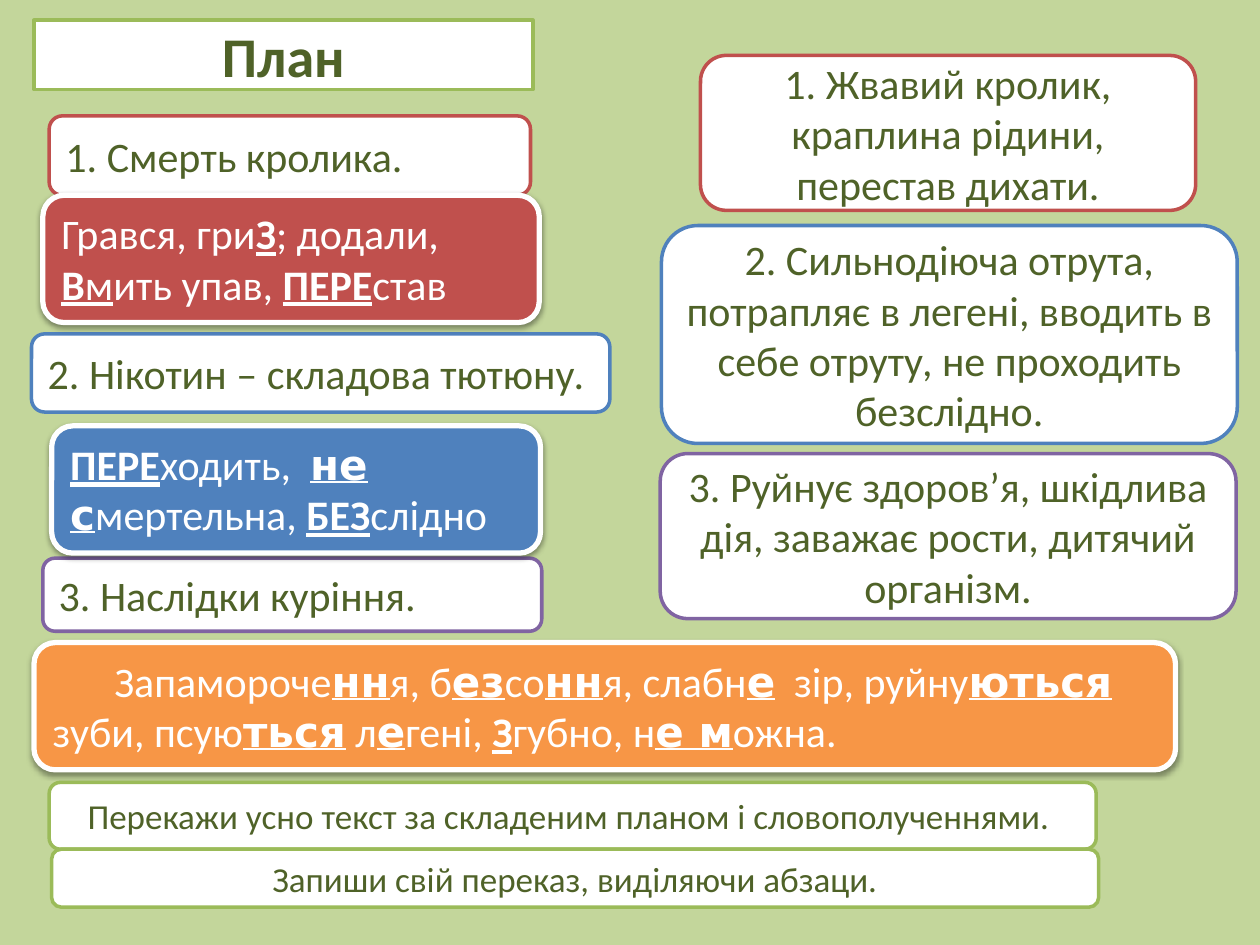
from lxml import etree
from pptx import Presentation
from pptx.dml.color import RGBColor
from pptx.enum.shapes import MSO_SHAPE
from pptx.enum.text import MSO_ANCHOR, MSO_AUTO_SIZE, PP_ALIGN
from pptx.oxml.ns import qn
from pptx.util import Inches, Pt

ROUNDED = MSO_SHAPE.ROUNDED_RECTANGLE
LEFT, CENTER = PP_ALIGN.LEFT, PP_ALIGN.CENTER
TOP, MIDDLE = MSO_ANCHOR.TOP, MSO_ANCHOR.MIDDLE
FIT_SHAPE, NO_FIT = MSO_AUTO_SIZE.SHAPE_TO_FIT_TEXT, MSO_AUTO_SIZE.NONE

BACKGROUND = RGBColor(0xC3, 0xD6, 0x9B)
DARK_GREEN = RGBColor(0x4F, 0x62, 0x28)
WHITE = RGBColor(0xFF, 0xFF, 0xFF)
RED = RGBColor(0xC0, 0x50, 0x4D)
BLUE = RGBColor(0x4F, 0x81, 0xBD)
PURPLE = RGBColor(0x80, 0x64, 0xA2)
GREEN = RGBColor(0x9B, 0xBB, 0x59)
ORANGE = RGBColor(0xF7, 0x96, 0x46)

FONT, ACCENT_FONT = "Calibri", "DejaVu Sans"

# Run styles: font, bold, underline
PLAIN = (FONT, False, False)
UNDER = (FONT, False, True)
STRONG = (FONT, True, True)
ACCENT = (ACCENT_FONT, True, True)

# Outlined cards: position, line colour, alignment, size, text
CARDS = [
    ((0.39, 0.92, 3.82, 0.63), RED, LEFT, 24, "1. Смерть кролика."),
    ((0.25, 2.65, 4.59, 0.62), BLUE, LEFT, 24, "2. Нікотин – складова тютюну."),
    ((0.34, 4.43, 3.96, 0.58), PURPLE, LEFT, 24, "3. Наслідки куріння."),
    ((5.56, 0.44, 3.93, 1.23), RED, CENTER, 24,
     "1. Жвавий кролик, краплина рідини, перестав дихати."),
    ((5.25, 1.79, 4.57, 1.73), BLUE, CENTER, 24,
     "2. Сильнодіюча отрута, потрапляє в легені, вводить в себе отруту, "
     "не проходить безслідно."),
    ((5.24, 3.6, 4.57, 1.31), PURPLE, CENTER, 24,
     "3. Руйнує здоров’я, шкідлива дія, заважає рости, дитячий організм."),
    ((0.39, 6.21, 8.31, 0.53), GREEN, CENTER, 20,
     "Перекажи усно текст за складеним планом і словополученнями. "),
    ((0.41, 6.74, 8.31, 0.46), GREEN, CENTER, 20,
     "Запиши свій переказ, виділяючи абзаци."),
]

# Filled word banks: position, fill colour, first-line indent, styled runs
WORD_BANKS = [
    ((0.34, 1.55, 3.94, 1.01), RED, 0, [
        ("Грався, гри", PLAIN), ("З", STRONG), ("; додали, ", PLAIN),
        ("В", STRONG), ("м", UNDER), ("ить упав, ", PLAIN),
        ("ПЕРЕ", STRONG), ("став", PLAIN)]),
    ((0.41, 3.38, 3.88, 1.01), BLUE, 0, [
        ("ПЕРЕ", STRONG), ("ходить,  ", PLAIN), ("не с", ACCENT),
        ("мертельна, ", PLAIN), ("БЕЗ", STRONG), ("слідно", PLAIN)]),
    ((0.27, 5.1, 9.06, 1.01), ORANGE, 0.49, [
        ("Запамороче", PLAIN), ("нн", ACCENT), ("я, б", PLAIN),
        ("ез", ACCENT), ("со", PLAIN), ("нн", ACCENT),
        ("я, слабн", PLAIN), ("е", ACCENT), ("  зір, руйну", PLAIN),
        ("ються", ACCENT), (" зуби, псую", PLAIN), ("ться", ACCENT),
        (" л", PLAIN), ("е", ACCENT), ("гені, ", PLAIN), ("З", STRONG),
        ("губно, н", PLAIN), ("е м", ACCENT), ("ожна.", PLAIN)]),
]


def paint(s, fill, line, width):
    s.fill.solid()
    s.fill.fore_color.rgb = fill
    s.line.color.rgb = line
    s.line.width = Pt(width)


def format_paragraph(p, size, color, align):
    p.alignment = align
    p.font.name = FONT
    p.font.size = Pt(size)
    p.font.color.rgb = color


def add_box(slide, box, fill, line, width):
    s = slide.shapes.add_shape(ROUNDED, *map(Inches, box))
    s.shadow.inherit = False
    paint(s, fill, line, width)
    s.text_frame.word_wrap = True
    return s


def add_shadow(s):
    effects = s._element.spPr.find(qn("a:effectLst"))
    shadow = etree.SubElement(effects, qn("a:outerShdw"), blurRad=str(Pt(3.1)),
                              dist=str(Pt(1.6)), dir="5400000", rotWithShape="0")
    color = etree.SubElement(shadow, qn("a:srgbClr"), val="000000")
    etree.SubElement(color, qn("a:alpha"), val="38000")


def add_title(slide, text):
    s = slide.shapes.title
    s.left, s.top, s.width, s.height = map(Inches, (0.27, 0.16, 3.96, 0.55))
    geometry = etree.SubElement(s._element.spPr, qn("a:prstGeom"), prst="roundRect")
    etree.SubElement(geometry, qn("a:avLst"))
    paint(s, WHITE, GREEN, 2)
    tf = s.text_frame
    tf.text = text
    tf.auto_size = NO_FIT
    tf.vertical_anchor = MIDDLE
    format_paragraph(tf.paragraphs[0], 32, DARK_GREEN, CENTER)
    tf.paragraphs[0].font.bold = True


def add_card(slide, box, line, align, size, text):
    tf = add_box(slide, box, WHITE, line, 2).text_frame
    tf.text = text
    tf.vertical_anchor = MIDDLE
    format_paragraph(tf.paragraphs[0], size, DARK_GREEN, align)


def add_word_bank(slide, box, fill, indent, runs):
    s = add_box(slide, box, fill, WHITE, 3)
    add_shadow(s)
    tf = s.text_frame
    tf.vertical_anchor = TOP
    tf.auto_size = FIT_SHAPE
    p = tf.paragraphs[0]
    format_paragraph(p, 24, WHITE, LEFT)
    p._p.get_or_add_pPr().set("indent", str(Inches(indent)))
    for text, (font, bold, underline) in runs:
        r = p.add_run()
        r.text = text
        r.font.name = font
        r.font.size = Pt(24)
        r.font.color.rgb = WHITE
        r.font.bold = bold
        r.font.underline = underline


def main():
    prs = Presentation()
    prs.slide_width, prs.slide_height = Inches(10), Inches(7.5)
    slide = prs.slides.add_slide(prs.slide_layouts[5])
    slide.background.fill.solid()
    slide.background.fill.fore_color.rgb = BACKGROUND

    add_title(slide, "План")
    for card in CARDS:
        add_card(slide, *card)
    # Word banks overlap the cards, so they come last
    for bank in WORD_BANKS:
        add_word_bank(slide, *bank)

    prs.save("out.pptx")


if __name__ == "__main__":
    main()
